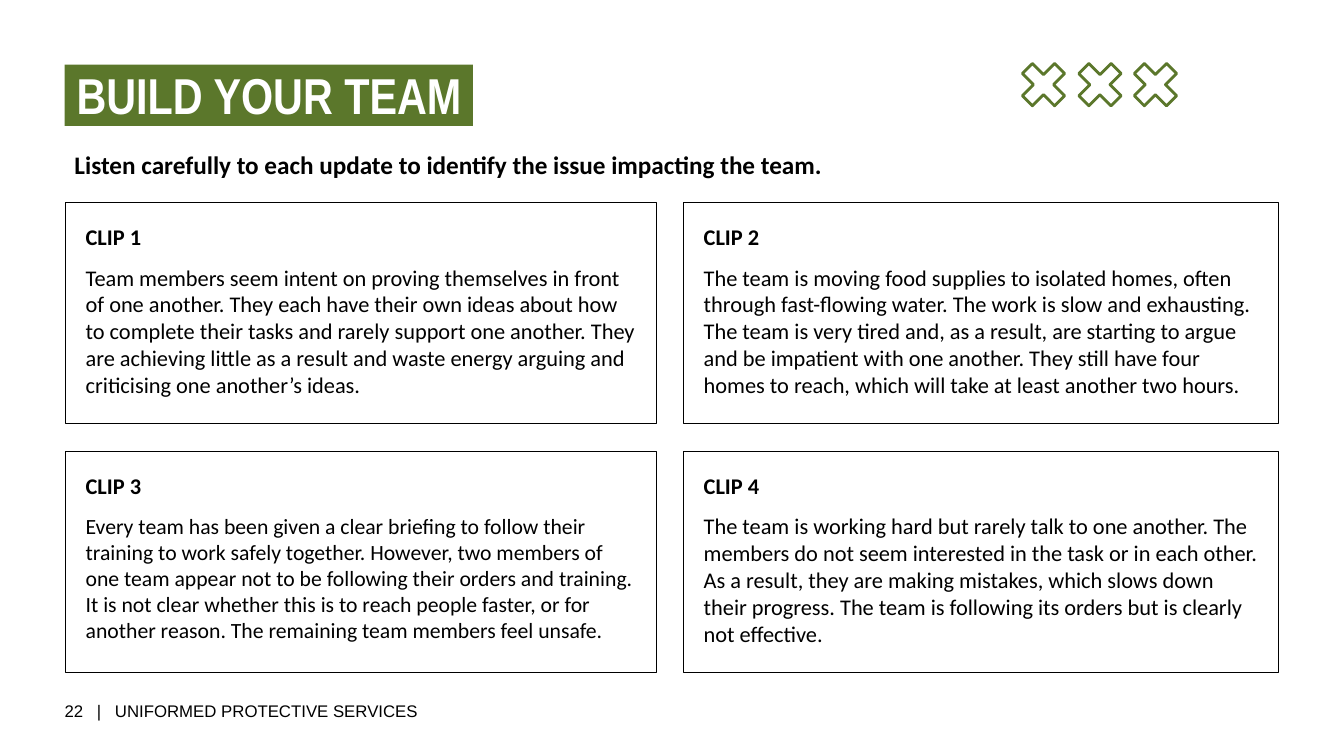
from lxml.etree import SubElement
from pptx import Presentation
from pptx.dml.color import RGBColor
from pptx.enum.shapes import MSO_SHAPE as Preset
from pptx.enum.text import MSO_ANCHOR as Anchor, MSO_AUTO_SIZE as AutoSize, PP_ALIGN as Align
from pptx.oxml.ns import qn
from pptx.util import Inches, Pt

GREEN, BLACK, WHITE = "5B772B", "000000", "FFFFFF"

COLUMNS = [(0.65, 5.86), (6.78, 5.9)]
ROWS = [2.01, 4.48]
CLIP_HEIGHT = 2.19

CLIPS = [
    ("Team members seem intent on proving themselves in front of one another. They each have "
     "their own ideas about how to complete their tasks and rarely support one another. They are "
     "achieving little as a result and waste energy arguing and criticising one another’s ideas.", 16),
    ("The team is moving food supplies to isolated homes, often through fast-flowing water. The "
     "work is slow and exhausting. The team is very tired and, as a result, are starting to argue "
     "and be impatient with one another. They still have four homes to reach, which will take at "
     "least another two hours.", 16),
    ("Every team has been given a clear briefing to follow their training to work safely together. "
     "However, two members of one team appear not to be following their orders and training. It is "
     "not clear whether this is to reach people faster, or for another reason. The remaining team "
     "members feel unsafe.", 15.5),
    ("The team is working hard but rarely talk to one another. The members do not seem interested "
     "in the task or in each other. As a result, they are making mistakes, which slows down their "
     "progress. The team is following its orders but is clearly not effective.", 16),
]

CROSS_OUTLINE = [(0.11, 0.21), (0.21, 0.11), (0.1, 0), (0.21, -0.11), (0.11, -0.21), (0, -0.1),
                 (-0.11, -0.21), (-0.21, -0.11), (-0.1, 0), (-0.21, 0.11), (-0.11, 0.21), (0, 0.1)]


def rgb(value):
    """Return the colour for a hex string."""
    return RGBColor.from_string(value)


def set_frame(frame, insets, anchor=Anchor.TOP, wrap=True):
    """Set the insets, anchor and wrapping of a text frame."""
    frame.margin_left, frame.margin_top, frame.margin_right, frame.margin_bottom = map(Inches, insets)
    frame.vertical_anchor = anchor
    frame.word_wrap = wrap
    frame.auto_size = AutoSize.NONE


def write(paragraph, text, size, font_name="Calibri", color=BLACK, bold=False, after=0):
    """Fill a paragraph with left-aligned text in one font."""
    paragraph.text = text
    paragraph.alignment = Align.LEFT
    paragraph.space_after = Pt(after)
    font = paragraph.font
    font.name, font.size, font.bold = font_name, Pt(size), bold
    font.color.rgb = rgb(color)


def set_outline(shape, color, width):
    """Give a shape an outline, no fill and no shadow."""
    shape.shadow.inherit = False
    shape.fill.background()
    shape.line.color.rgb = rgb(color)
    shape.line.width = Pt(width)


def add_title(slide, text):
    """Place the title on its green band."""
    title = slide.shapes.title
    title.left, title.top, title.width, title.height = map(Inches, (0.64, 0.64, 4.05, 0.61))
    title.fill.solid()
    title.fill.fore_color.rgb = rgb(GREEN)
    set_frame(title.text_frame, (0.12, 0, 0.08, 0), wrap=False)
    write(title.text_frame.paragraphs[0], text, 36, "Arial Narrow", WHITE, True)


def add_instruction(slide, text):
    """Add the instruction line under the title."""
    instruction = slide.shapes.add_textbox(*map(Inches, (0.64, 1.38, 11.02, 0.5)))
    set_frame(instruction.text_frame, (0.1,) * 4)
    write(instruction.text_frame.paragraphs[0], text, 18, bold=True, after=10)


def add_clip(slide, number, story, size):
    """Add one numbered clip box at its place in the grid."""
    row, column = divmod(number - 1, len(COLUMNS))
    left, width = COLUMNS[column]
    clip = slide.shapes.add_shape(
        Preset.RECTANGLE, *map(Inches, (left, ROWS[row], width, CLIP_HEIGHT)))
    set_outline(clip, BLACK, 1)
    frame = clip.text_frame
    set_frame(frame, (0.2,) * 4)
    write(frame.paragraphs[0], f"CLIP {number}", 16, bold=True, after=10)
    write(frame.add_paragraph(), story, size, after=10)


def add_crosses(slide, centers, middle):
    """Draw a row of outlined crosses as one freeform."""
    outlines = [[(Inches(center + x), Inches(middle + y)) for x, y in CROSS_OUTLINE]
                for center in centers]
    builder = slide.shapes.build_freeform(*outlines[0][0])
    for index, (start, *corners) in enumerate(outlines):
        if index:
            builder.move_to(*start)
        builder.add_line_segments(corners, close=True)
    set_outline(builder.convert_to_shape(), GREEN, 2)


def add_footer(slide, parts, tab_stops):
    """Add the footer with its parts set at tab stops."""
    footer = slide.shapes.add_textbox(*map(Inches, (0.64, 6.95, 3.82, 0.2)))
    set_frame(footer.text_frame, (0,) * 4, Anchor.MIDDLE)
    line = footer.text_frame.paragraphs[0]
    tabs = SubElement(line._p.get_or_add_pPr(), qn("a:tabLst"))
    for stop in tab_stops:
        SubElement(tabs, qn("a:tab"), pos=str(Inches(stop)), algn="l")
    write(line, "\t".join(parts), 12, "Arial")


def main():
    """Build and save the slide."""
    deck = Presentation()
    deck.slide_width, deck.slide_height = Inches(13.33), Inches(7.5)
    slide = deck.slides.add_slide(deck.slide_layouts.get_by_name("Title Only"))
    add_title(slide, "BUILD YOUR TEAM")
    add_instruction(slide, "Listen carefully to each update to identify the issue impacting the team.")
    for number, (story, size) in enumerate(CLIPS, 1):
        add_clip(slide, number, story, size)
    add_crosses(slide, [10.35, 10.91, 11.46], 0.84)
    add_footer(slide, ["22", "|", "UNIFORMED PROTECTIVE SERVICES"], [0.32, 0.5])
    deck.save("out.pptx")


if __name__ == "__main__":
    main()
